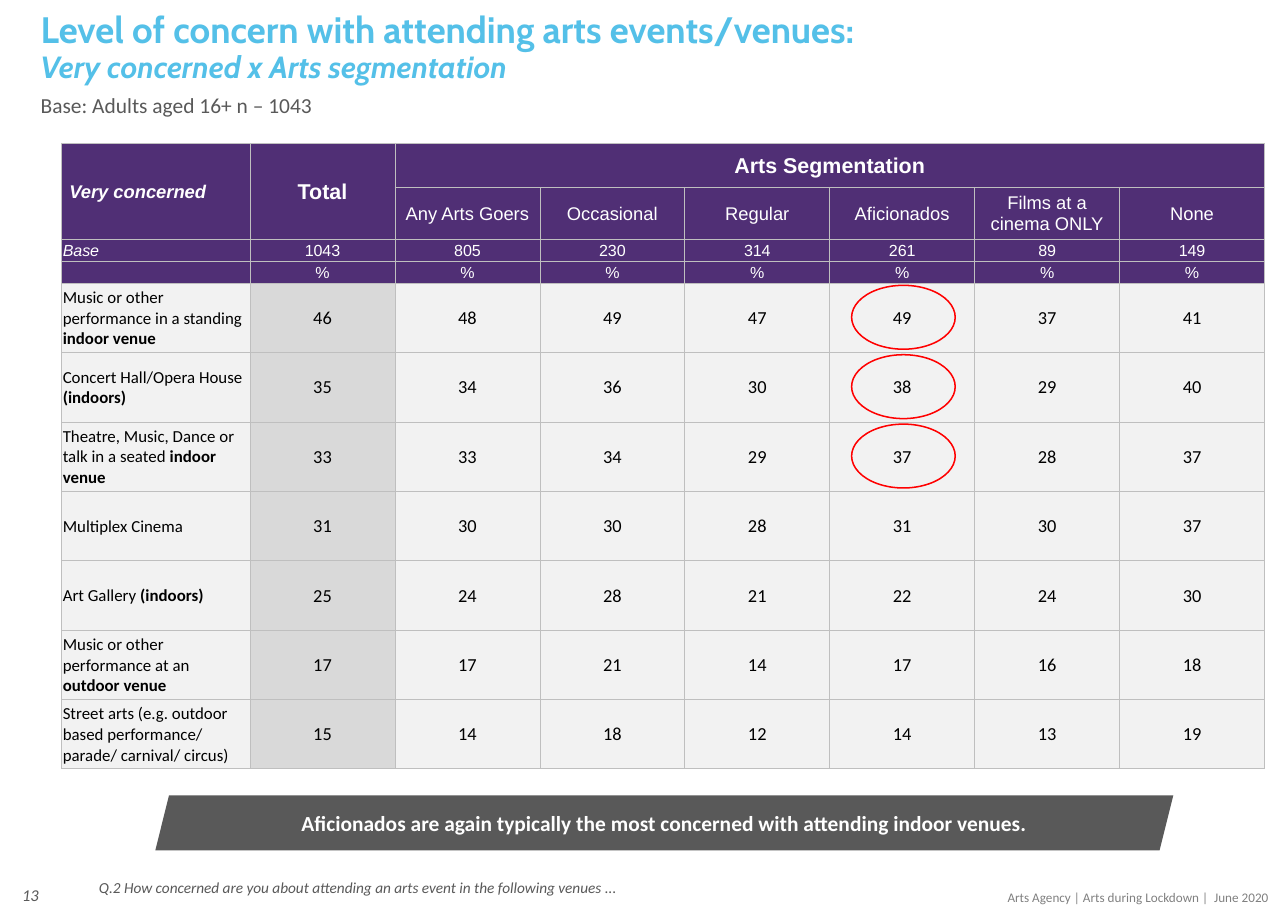
from pptx import Presentation
from pptx.dml.color import RGBColor
from pptx.enum.shapes import MSO_SHAPE
from pptx.enum.text import MSO_ANCHOR, PP_ALIGN
from pptx.oxml.ns import qn
from pptx.util import Inches, Pt
from lxml import etree

LEFT, CENTER, RIGHT = PP_ALIGN.LEFT, PP_ALIGN.CENTER, PP_ALIGN.RIGHT
TOP, MIDDLE = MSO_ANCHOR.TOP, MSO_ANCHOR.MIDDLE
ELLIPSE, PARALLELOGRAM = MSO_SHAPE.OVAL, MSO_SHAPE.PARALLELOGRAM

PURPLE, PALE, MID, BORDER = "502F75", "F2F2F2", "D9D9D9", "BFBFBF"
BLUE, GREY, FOOTER_GREY, RED = "54C0E8", "595959", "808080", "FF0000"
WHITE, BLACK = "FFFFFF", "000000"

SEGMENTS = ["Any Arts Goers", "Occasional", "Regular", "Aficionados",
            "Films at a cinema ONLY", "None"]
BASES = [1043, 805, 230, 314, 261, 89, 149]
VENUES = [
    ("Music or other performance in a standing ", "indoor venue",
     [46, 48, 49, 47, 49, 37, 41]),
    ("Concert Hall/Opera House ", "(indoors)",
     [35, 34, 36, 30, 38, 29, 40]),
    ("Theatre, Music, Dance or talk in a seated ", "indoor venue",
     [33, 33, 34, 29, 37, 28, 37]),
    ("Multiplex Cinema", "", [31, 30, 30, 28, 31, 30, 37]),
    ("Art Gallery ", "(indoors)", [25, 24, 28, 21, 22, 24, 30]),
    ("Music or other performance at an ", "outdoor venue",
     [17, 17, 21, 14, 17, 16, 18]),
    ("Street arts (e.g. outdoor based performance/ parade/ carnival/ circus)",
     "", [15, 14, 18, 12, 14, 13, 19]),
]
TABLE_X, TABLE_Y, TABLE_W = 0.56, 1.3, 10.92
LABEL_W, VENUE_H = 1.71, 0.63
HEAD_HEIGHTS = [0.4, 0.47, 0.2, 0.2]


def rgb(value):
    return RGBColor.from_string(value)


def add_text(p, text, size=12, font="Calibri", color=BLACK, bold=False,
             italic=False, align=LEFT, spacing=None):
    p.alignment = align
    if spacing:
        p.line_spacing = spacing
    r = p.add_run()
    r.text = text
    r.font.size = Pt(size)
    r.font.name = font
    r.font.color.rgb = rgb(color)
    r.font.bold = bold
    r.font.italic = italic


class SlideBuilder:
    def __init__(self, prs):
        self.s = prs.slides.add_slide(prs.slide_layouts[6])

    def text(self, x, y, w, h, text, anchor=TOP, **fmt):
        sp = self.s.shapes.add_textbox(Inches(x), Inches(y), Inches(w), Inches(h))
        tf = sp.text_frame
        tf.word_wrap = True
        tf.vertical_anchor = anchor
        p = tf.paragraphs[0]
        add_text(p, text, **fmt)
        return p

    def shape(self, kind, x, y, w, h, fill=None, line=None):
        sp = self.s.shapes.add_shape(kind, Inches(x), Inches(y), Inches(w), Inches(h))
        sp.shadow.inherit = False
        if fill:
            sp.fill.solid()
            sp.fill.fore_color.rgb = rgb(fill)
        else:
            sp.fill.background()
        if line:
            sp.line.color.rgb = rgb(line)
            sp.line.width = Pt(1)
        else:
            sp.line.fill.background()
        return sp

    def banner(self, x, y, w, h, text, **fmt):
        tf = self.shape(PARALLELOGRAM, x, y, w, h, fill=GREY).text_frame
        tf.margin_left = tf.margin_right = tf.margin_top = tf.margin_bottom = 0
        tf.word_wrap = True
        tf.vertical_anchor = MIDDLE
        add_text(tf.paragraphs[0], text, **fmt)

    def table(self, x, y, widths, heights):
        frame = self.s.shapes.add_table(len(heights), len(widths), Inches(x), Inches(y),
                                        Inches(sum(widths)), Inches(sum(heights)))
        tbl = frame.table
        for column, w in zip(tbl.columns, widths):
            column.width = Inches(w)
        for row, h in zip(tbl.rows, heights):
            row.height = Inches(h)
        for cell in tbl.iter_cells():
            self.border(cell)
        return tbl

    def border(self, cell):
        tc_pr = cell._tc.get_or_add_tcPr()
        for side in ("lnL", "lnR", "lnT", "lnB"):
            ln = etree.SubElement(tc_pr, qn("a:" + side), w=str(Pt(0.5)))
            fill = etree.SubElement(ln, qn("a:solidFill"))
            etree.SubElement(fill, qn("a:srgbClr"), val=BORDER)

    def cell(self, cell, text, fill, **fmt):
        cell.fill.solid()
        cell.fill.fore_color.rgb = rgb(fill)
        cell.vertical_anchor = MIDDLE
        cell.margin_left = cell.margin_right = cell.margin_top = Inches(0.01)
        cell.margin_bottom = 0
        p = cell.text_frame.paragraphs[0]
        if text:
            add_text(p, text, **fmt)
        else:
            p._p.get_or_add_endParaRPr().set("sz", "1050")
        return p


def concern_table(b):
    value_w = (TABLE_W - LABEL_W) / len(BASES)
    tbl = b.table(TABLE_X, TABLE_Y, [LABEL_W] + [value_w] * len(BASES),
                  HEAD_HEIGHTS + [VENUE_H] * len(VENUES))
    tbl.cell(0, 0).merge(tbl.cell(1, 0))
    tbl.cell(0, 1).merge(tbl.cell(1, 1))
    tbl.cell(0, 2).merge(tbl.cell(0, 7))

    head = dict(fill=PURPLE, font="Arial", color=WHITE)
    b.cell(tbl.cell(0, 0), "Very concerned", bold=True, italic=True, **head)
    tbl.cell(0, 0).margin_left = Inches(0.07)
    for col, title in ((1, "Total"), (2, "Arts Segmentation")):
        b.cell(tbl.cell(0, col), title, size=14, bold=True, align=CENTER, **head)
    for col, segment in enumerate(SEGMENTS, 2):
        b.cell(tbl.cell(1, col), segment, align=CENTER, **head)

    b.cell(tbl.cell(2, 0), "Base", size=10.5, italic=True, **head)
    b.cell(tbl.cell(3, 0), "", PURPLE)
    for col, base in enumerate(BASES, 1):
        b.cell(tbl.cell(2, col), str(base), size=10.5, align=CENTER, **head)
        b.cell(tbl.cell(3, col), "%", size=10.5, align=CENTER, **head)

    for row, (plain, strong, values) in enumerate(VENUES, len(HEAD_HEIGHTS)):
        p = b.cell(tbl.cell(row, 0), plain, PALE, size=11)
        if strong:
            add_text(p, strong, size=11, bold=True)
        for col, value in enumerate(values, 1):
            b.cell(tbl.cell(row, col), str(value), MID if col == 1 else PALE, align=CENTER)


def main():
    prs = Presentation()
    prs.slide_width, prs.slide_height = Inches(11.69), Inches(8.27)
    b = SlideBuilder(prs)

    title = dict(font="Cabin", color=BLUE, bold=True, spacing=0.9)
    p = b.text(0.27, 0.06, 9.38, 0.45, "Level of concern with attending arts events/venues:",
               size=24, **title)
    p.add_line_break()
    add_text(p, "Very concerned x Arts segmentation", size=20, italic=True, **title)
    b.text(0.27, 0.81, 6.55, 0.39, "Base: Adults aged 16+ n – 1043",
           size=14, color=GREY, spacing=0.9)

    concern_table(b)
    for i in range(3):
        b.shape(ELLIPSE, 7.73, 2.59 + i * VENUE_H, 0.94, 0.58, line=RED)

    b.banner(1.41, 7.22, 9.24, 0.5,
             "Aficionados are again typically the most concerned with attending indoor venues.",
             size=14, color=WHITE, bold=True, align=CENTER)
    b.text(0.8, 7.94, 6.58, 0.18,
           "Q.2 How concerned are you about attending an arts event in the following venues ...",
           size=10, color=GREY, italic=True, spacing=0.9)
    b.text(-0.06, 7.9, 0.51, 0.44, "13", anchor=MIDDLE, size=10.8, color=GREY,
           italic=True, align=RIGHT)
    b.text(7.71, 8.02, 3.91, 0.25, "Arts Agency | Arts during Lockdown |  June 2020",
           size=8.6, color=FOOTER_GREY, align=RIGHT)
    prs.save("out.pptx")


if __name__ == "__main__":
    main()
